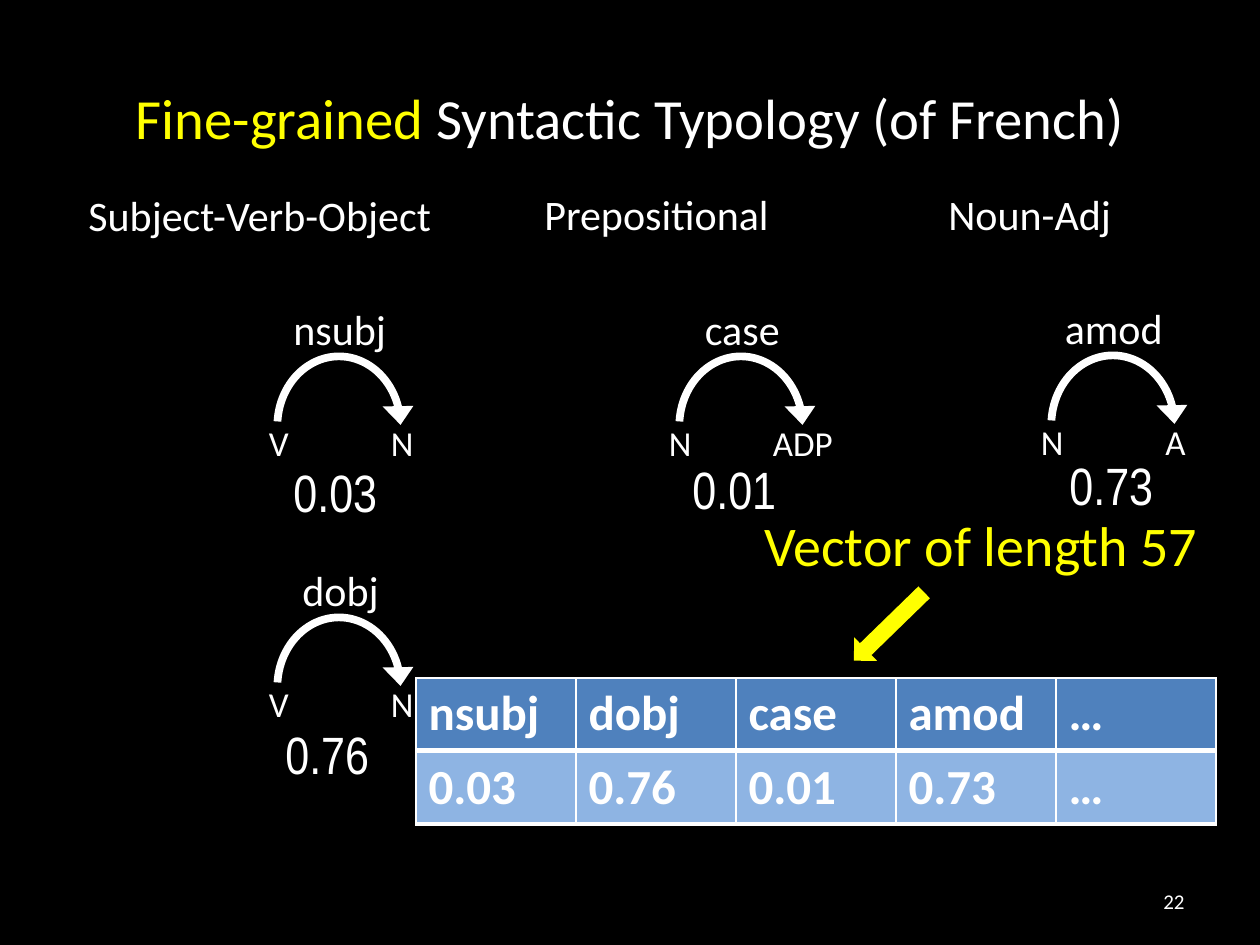
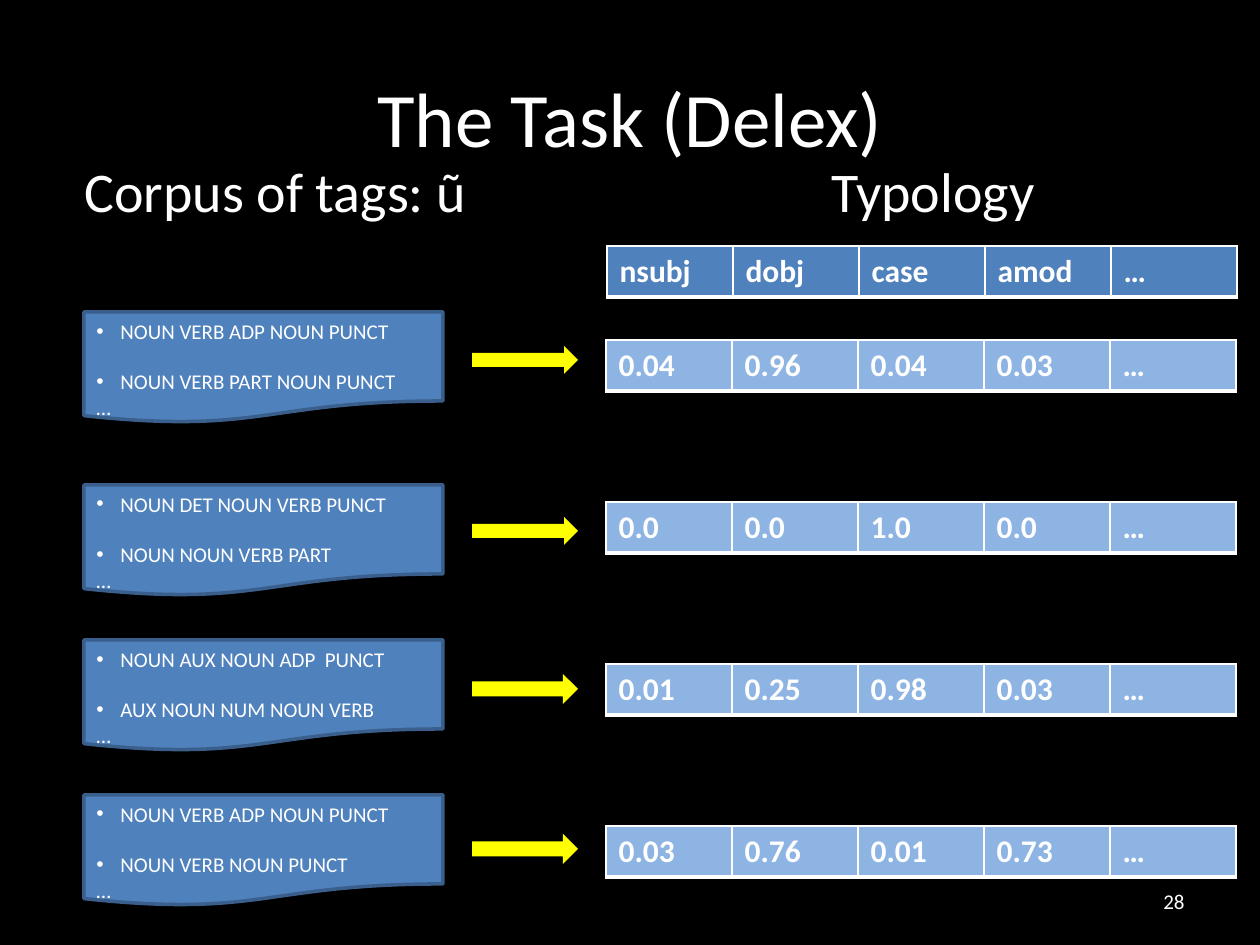
from pptx import Presentation
from pptx import util as u
from pptx.dml.color import RGBColor
from pptx.enum import shapes, text
from pptx.oxml import parse_xml
from pptx.oxml.ns import nsdecls
from lxml import etree

EMU_PER_PX = 914400 / 126
BLACK, WHITE, YELLOW = "000000", "FFFFFF", "FFFF00"
BLUE, LIGHT_BLUE, EDGE_BLUE = "4F81BD", "8EB4E3", "3A5F8C"
FONT, VALUE_FONT = "Calibri", "Arial Narrow"
RELATIONS = ["nsubj", "dobj", "case", "amod", "…"]
FRENCH = ["0.03", "0.76", "0.01", "0.73", "…"]
LABEL_WIDTHS = {"nsubj": 120, "dobj": 102, "case": 101, "amod": 125}
TAG_WIDTHS = {"V": 45, "N": 49, "ADP": 89, "A": 48}
ARC_ADJUSTMENTS = [0.05, 10.51, 204.87, 110.53, 0.1]


def px(length):
    return u.Emu(round(length * EMU_PER_PX))


def box_of(*lengths):
    return [px(length) for length in lengths]


def rgb(color):
    return RGBColor.from_string(color)


def style(run, size, color=WHITE, name=FONT, bold=False):
    run.font.name = name
    run.font.size = u.Pt(size)
    run.font.bold = bold
    run.font.color.rgb = rgb(color)


def add_label(slide, x, y, width, words, size, color=WHITE, name=FONT):
    height = round(size * 2.1 + 13)
    frame = slide.shapes.add_textbox(*box_of(x, y, width, height)).text_frame
    frame.text = words
    frame.word_wrap = False
    frame.auto_size = text.MSO_AUTO_SIZE.SHAPE_TO_FIT_TEXT
    style(frame.paragraphs[0].runs[0], size, color, name)


def add_line_of_text(slide, box, pieces, size, align):
    frame = slide.shapes.add_textbox(*box_of(*box)).text_frame
    frame.word_wrap = True
    frame.vertical_anchor = text.MSO_ANCHOR.MIDDLE
    line = frame.paragraphs[0]
    line.alignment = align
    for words, color in pieces:
        run = line.add_run()
        run.text = words
        style(run, size, color)


def add_base(prs, title, title_size, number):
    slide = prs.slides.add_slide(prs.slide_layouts[6])
    slide.background.fill.solid()
    slide.background.fill.fore_color.rgb = rgb(BLACK)
    add_line_of_text(slide, (63, 38, 1134, 157), title, title_size, text.PP_ALIGN.CENTER)
    add_line_of_text(slide, (903, 876, 294, 50), [(number, WHITE)], 12, text.PP_ALIGN.RIGHT)
    return slide


def add_filled(slide, preset, box, fill):
    shape = slide.shapes.add_shape(preset, *box_of(*box))
    shape.shadow.inherit = False
    shape.fill.solid()
    shape.fill.fore_color.rgb = rgb(fill)
    shape.line.fill.background()
    return shape


def add_borders(cell):
    properties = cell._tc.get_or_add_tcPr()
    for side, points in (("L", 1), ("R", 1), ("T", 1), ("B", 3)):
        properties.append(parse_xml(
            f'<a:ln{side} {nsdecls("a")} w="{u.Pt(points)}"><a:solidFill>'
            f'<a:srgbClr val="{WHITE}"/></a:solidFill></a:ln{side}>'))


def add_vector(slide, x, y, column, row, entries, fill, size):
    frame = slide.shapes.add_table(
        1, len(entries), *box_of(x, y, column * len(entries), row))
    table = frame.table
    table.first_row = table.horz_banding = False
    table.rows[0].height = px(row)
    for index, entry in enumerate(entries):
        table.columns[index].width = px(column)
        cell = table.cell(0, index)
        cell.text = entry
        style(cell.text_frame.paragraphs[0].runs[0], size, bold=True)
        add_borders(cell)
        cell.fill.solid()
        cell.fill.fore_color.rgb = rgb(fill)


def add_dependency(slide, x, y, relation, head, child, value, value_dx, value_dy):
    def centred(middle, dy, width, words, size):
        add_label(slide, x + middle - width / 2, y + dy, width, words, size)

    arc = add_filled(slide, shapes.MSO_SHAPE.CIRCULAR_ARROW, (x, y, 154, 170), WHITE)
    for index, adjustment in enumerate(ARC_ADJUSTMENTS):
        arc.adjustments[index] = adjustment
    centred(79, -44, LABEL_WIDTHS[relation], relation, 24)
    centred(17, 74, TAG_WIDTHS[head], head, 20)
    centred(141, 74, TAG_WIDTHS[child], child, 20)
    add_label(slide, x + value_dx, y + value_dy, 122, value, 30, name=VALUE_FONT)


def add_corpus(slide, x, y, sentences):
    corpus = add_filled(slide, shapes.MSO_SHAPE.FLOWCHART_DOCUMENT, (x, y, 359, 111), BLUE)
    corpus.line.color.rgb = rgb(EDGE_BLUE)
    corpus.line.width = u.Pt(2)
    frame = corpus.text_frame
    frame.word_wrap = True
    frame.vertical_anchor = text.MSO_ANCHOR.TOP
    frame.text = "\n".join([*sentences, "…"])
    for index, line in enumerate(frame.paragraphs):
        line.alignment = text.PP_ALIGN.LEFT
        if index < len(sentences):
            properties = line._p.get_or_add_pPr()
            properties.set("marL", str(px(24)))
            properties.set("indent", str(px(-24)))
            tag = "{http://schemas.openxmlformats.org/drawingml/2006/main}"
            etree.SubElement(properties, tag + "buFont", typeface="Arial")
            etree.SubElement(properties, tag + "buChar", char="•")
        if 0 < index < len(sentences):
            line.space_before = u.Pt(14.6)
        style(line.runs[0], 12)


def build_typology(prs):
    slide = add_base(prs, [("Fine-grained", YELLOW),
                           (" Syntactic Typology (of French)", WHITE)], 32.4, "22")
    for x, y, width, words in ((76, 183, 372, "Subject-Verb-Object"),
                               (532, 182, 252, "Prepositional"),
                               (936, 182, 190, "Noun-Adj")):
        add_label(slide, x, y, width, words, 24)
    add_vector(slide, 416, 678, 160, 72, RELATIONS, BLUE, 28)
    add_vector(slide, 416, 752, 160, 72, FRENCH, LIGHT_BLUE, 28)
    dependencies = (
        (262, 341, "nsubj", "V", "N", "0.03", 19, 113),
        (262, 602, "dobj", "V", "N", "0.76", 11, 114),
        (664, 341, "case", "N", "ADP", "0.01", 16, 110),
        (1036, 340, "amod", "N", "A", "0.73", 21, 107),
    )
    for dependency in dependencies:
        add_dependency(slide, *dependency)
    add_label(slide, 752, 504, 464, "Vector of length 57", 32, YELLOW)
    pointer = add_filled(slide, shapes.MSO_SHAPE.RIGHT_ARROW, (840, 610, 98, 33), YELLOW)
    pointer.rotation = 135.8


def build_task(prs):
    slide = add_base(prs, [("The Task (Delex)", WHITE)], 44, "28")
    add_label(slide, 72, 150, 412, "Corpus of tags: ũ", 32)
    add_label(slide, 819, 150, 231, "Typology", 32)
    add_vector(slide, 607, 246, 126, 51, RELATIONS, BLUE, 18)
    languages = (
        (312, 346, 28, ["NOUN VERB ADP NOUN PUNCT", "NOUN VERB PART NOUN PUNCT"],
         ["0.04", "0.96", "0.04", "0.03", "…"]),
        (485, 517, 28, ["NOUN DET NOUN VERB PUNCT", "NOUN NOUN VERB PART"],
         ["0.0", "0.0", "1.0", "0.0", "…"]),
        (640, 674, 30, ["NOUN AUX NOUN ADP  PUNCT", "AUX NOUN NUM NOUN VERB"],
         ["0.01", "0.25", "0.98", "0.03", "…"]),
        (795, 834, 30, ["NOUN VERB ADP NOUN PUNCT", "NOUN VERB NOUN PUNCT"], FRENCH),
    )
    for index, (corpus_y, arrow_y, arrow_height, sentences, vector) in enumerate(languages):
        add_corpus(slide, 84, corpus_y, sentences)
        add_filled(slide, shapes.MSO_SHAPE.RIGHT_ARROW,
                   (472, arrow_y, 106, arrow_height), YELLOW)
        add_vector(slide, 606, 340 + 162 * index, 126, 51, vector, LIGHT_BLUE, 18)


def main():
    prs = Presentation()
    prs.slide_width, prs.slide_height = box_of(1260, 945)
    build_typology(prs)
    build_task(prs)
    prs.save("out.pptx")


if __name__ == "__main__":
    main()
